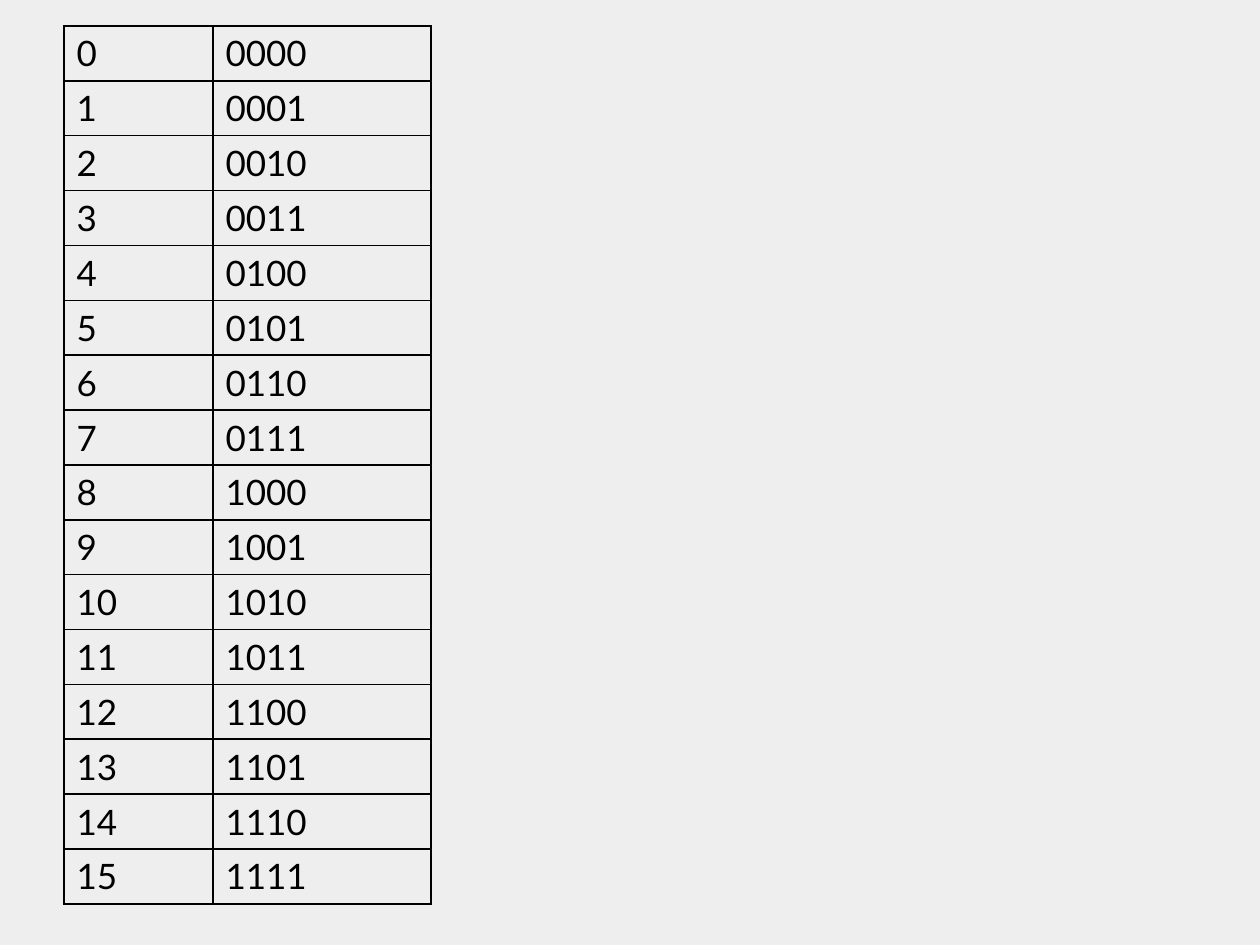
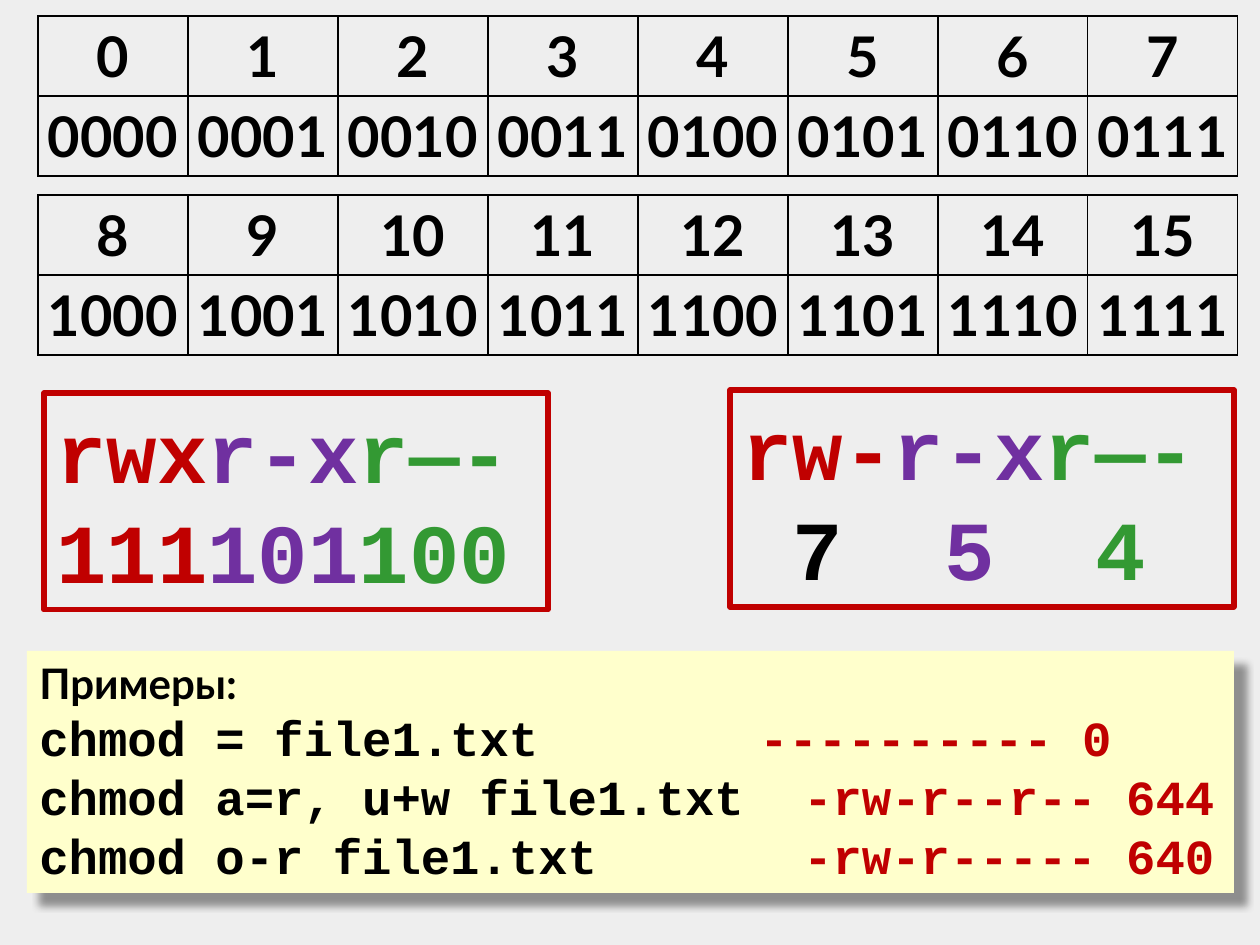
from lxml import etree
from pptx import Presentation
from pptx.dml.color import RGBColor
from pptx.enum.shapes import MSO_SHAPE
from pptx.enum.text import MSO_ANCHOR, PP_ALIGN
from pptx.oxml.ns import qn
from pptx.util import Pt

PX = 914400 / 126
COLORS = {
    "back": "EEEEEE",
    "ink": "000000",
    "owner": "C00000",
    "group": "7030A0",
    "other": "339933",
    "note": "FFFFCC",
}
BODY, CODE = "Lato", "Courier New"


def px(n):
    return round(n * PX)


def rgb(name):
    return RGBColor.from_string(COLORS[name])


def solid(parent, name, alpha=None):
    color = etree.SubElement(parent, qn("a:srgbClr"), val=COLORS[name])
    if alpha:
        etree.SubElement(color, qn("a:alpha"), val=str(alpha * 1000))


class Deck:
    def __init__(self):
        self.prs = Presentation()
        self.prs.slide_width, self.prs.slide_height = px(1260), px(945)
        fill = self.prs.slide_master.background.fill
        fill.solid()
        fill.fore_color.rgb = rgb("back")

    def slide(self):
        self.s = self.prs.slides.add_slide(self.prs.slide_layouts[6])

    def run(self, p, text, color="ink", **font):
        r = p.add_run()
        r.text = text
        for key, value in font.items():
            setattr(r.font, key, value)
        r.font.color.rgb = rgb(color)

    def tabs(self, p, stops):
        lst = etree.SubElement(p._p.get_or_add_pPr(), qn("a:tabLst"))
        for stop in stops:
            etree.SubElement(lst, qn("a:tab"), pos=str(px(stop)), algn="l")

    def borders(self, cell):
        tcPr = cell._tc.get_or_add_tcPr()
        for side in ("a:lnL", "a:lnR", "a:lnT", "a:lnB"):
            ln = etree.SubElement(tcPr, qn(side), w=str(Pt(1)))
            solid(etree.SubElement(ln, qn("a:solidFill")), "ink")

    def table(self, x, y, widths, height, rows, font, cell_format=None, align=None):
        shape = self.s.shapes.add_table(
            len(rows), len(widths), px(x), px(y), px(sum(widths)), px(height))
        tbl = shape.table
        tbl.first_row = tbl.horz_banding = False
        for column, width in zip(tbl.columns, widths):
            column.width = px(width)
        for i, row in enumerate(rows):
            for j, text in enumerate(row):
                cell = tbl.cell(i, j)
                for key, value in (cell_format or {}).items():
                    setattr(cell, key, value)
                self.borders(cell)
                cell.fill.background()
                p = cell.text_frame.paragraphs[0]
                p.alignment = align
                self.run(p, text, name=BODY, **font)

    def box(self, x, y, w, h, lines, fill=None, line=None):
        sp = self.s.shapes.add_shape(MSO_SHAPE.RECTANGLE, px(x), px(y), px(w), px(h))
        sp.shadow.inherit = False
        if fill:
            sp.fill.solid()
            sp.fill.fore_color.rgb = rgb(fill)
        else:
            sp.fill.background()
        if line:
            sp.line.color.rgb = rgb(line)
            sp.line.width = Pt(3)
        else:
            sp.line.fill.background()
        tf = sp.text_frame
        tf.word_wrap = True
        tf.vertical_anchor = MSO_ANCHOR.TOP
        for i, (stops, font, runs) in enumerate(lines):
            p = tf.add_paragraph() if i else tf.paragraphs[0]
            p.alignment = PP_ALIGN.LEFT
            if stops:
                self.tabs(p, stops)
            for text, color in runs:
                self.run(p, text, color, bold=True, **font)
        return sp

    def drop_shadow(self, sp):
        effects = sp._element.spPr.find(qn("a:effectLst"))
        shadow = etree.SubElement(
            effects, qn("a:outerShdw"), blurRad=str(Pt(4)), dist=str(Pt(10)),
            dir=str(45 * 60000), algn="tl", rotWithShape="0")
        solid(shadow, "ink", 40)


def binary_rows(numbers):
    return [(str(n), f"{n:04b}") for n in numbers]


def binary_column(deck):
    deck.slide()
    deck.table(64, 26, [149, 218], 873, binary_rows(range(16)), {"size": Pt(20)})


def permissions(deck):
    deck.slide()
    inset = dict.fromkeys(
        ("margin_left", "margin_right", "margin_top", "margin_bottom"), px(6))
    for y, start in ((16, 0), (195, 8)):
        rows = list(zip(*binary_rows(range(start, start + 8))))
        deck.table(38, y, [150] * 8, 160, rows, {"size": Pt(32), "bold": True},
                   inset, PP_ALIGN.CENTER)

    classes = ("owner", "group", "other")
    big = {"name": CODE, "size": Pt(48)}
    digit_stops = [50, 202, 353]
    for x, y, rights, values, colors, stops in (
        (44, 393, ("rwx", "r-x", "r—-"), ("111", "101", "100"), classes, None),
        (730, 390, ("rw-", "r-x", "r—-"), ("\t7", "\t5", "\t4"),
         ("ink", "group", "other"), digit_stops),
    ):
        deck.box(x, y, 504, 217, [
            (None, big, zip(rights, classes)),
            (stops, big, zip(values, colors)),
        ], line="owner")

    lines = [(None, {"name": BODY, "size": Pt(24)}, [("Примеры:", "ink")])]
    for stop, command, result in (
        (720, "chmod = file1.txt", "---------- 0"),
        (764, "chmod a=r, u+w file1.txt", "-rw-r--r-- 644"),
        (764, "chmod o-r file1.txt", "-rw-r----- 640"),
    ):
        lines.append(([stop], {"name": CODE, "size": Pt(28)},
                      [(command, "ink"), ("\t" + result, "owner")]))
    deck.drop_shadow(deck.box(27, 651, 1207, 242, lines, fill="note"))


def main():
    deck = Deck()
    binary_column(deck)
    permissions(deck)
    deck.prs.save("out.pptx")


if __name__ == "__main__":
    main()
